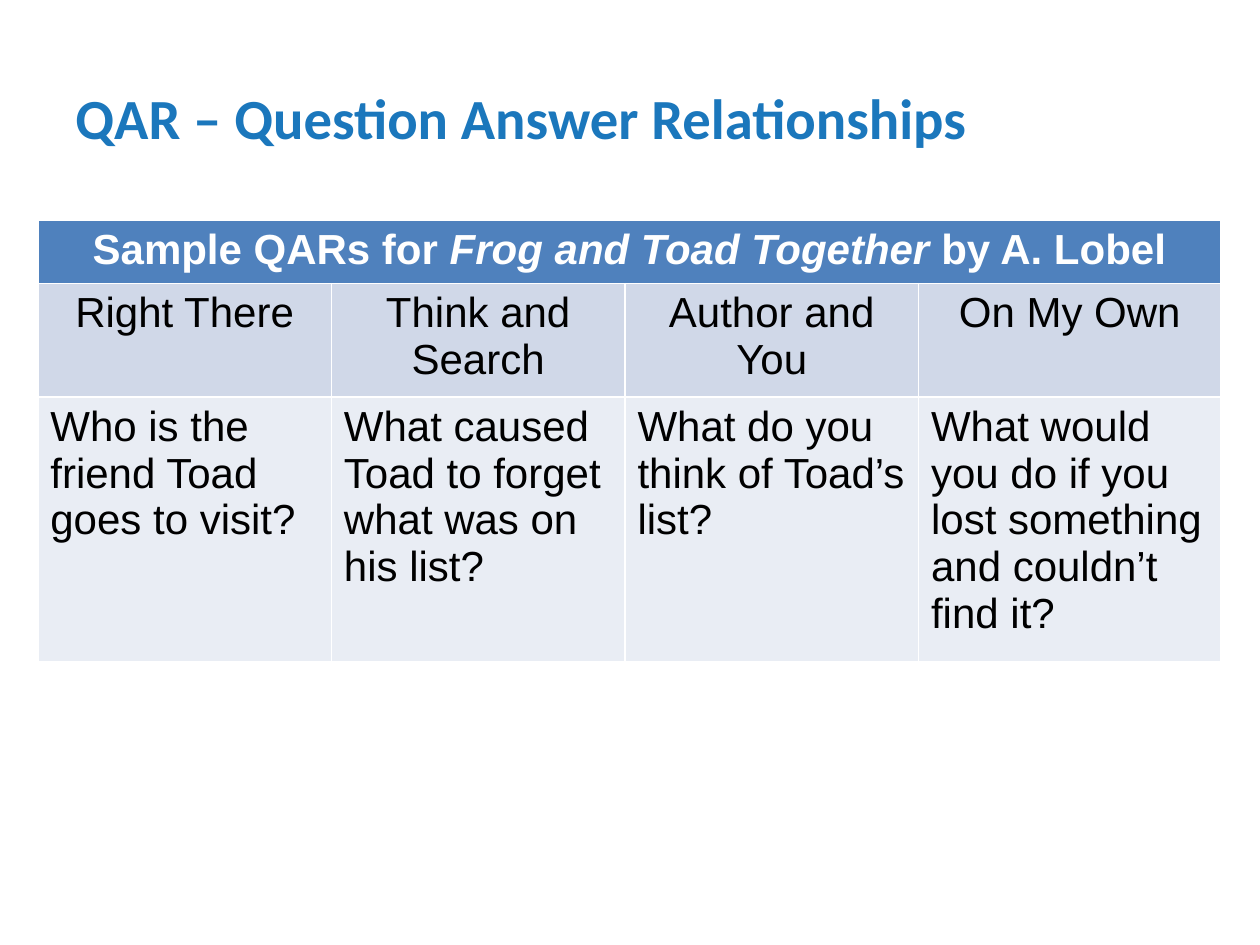
from dataclasses import dataclass

from pptx import Presentation
from pptx.dml.color import RGBColor
from pptx.enum.text import MSO_ANCHOR, PP_ALIGN
from pptx.slide import Slide
from pptx.table import Table
from pptx.util import Inches, Pt


@dataclass(frozen=True)
class Theme:
    title_font: str = "Calibri"
    table_font: str = "Arial"
    title_size: float = 32.4
    table_size: float = 24
    title: str = "1B77BC"
    header_text: str = "FFFFFF"
    body_text: str = "000000"


@dataclass(frozen=True)
class Run:
    text: str
    italic: bool = False


@dataclass(frozen=True)
class RowStyle:
    fill: str
    text: str
    bold: bool
    align: PP_ALIGN


@dataclass(frozen=True)
class Relationship:
    name: str
    question: str


THEME = Theme()
HEADING = RowStyle("4F81BD", THEME.header_text, True, PP_ALIGN.CENTER)
NAMES = RowStyle("D0D8E8", THEME.body_text, False, PP_ALIGN.CENTER)
QUESTIONS = RowStyle("E9EDF4", THEME.body_text, False, PP_ALIGN.LEFT)

HEADING_RUNS = [
    Run("Sample QARs for "),
    Run("Frog and Toad Together ", italic=True),
    Run("by A. Lobel"),
]
RELATIONSHIPS = [
    Relationship("Right There", "Who is the friend Toad goes to visit?"),
    Relationship("Think and Search", "What caused Toad to forget what was on his list?"),
    Relationship("Author and You", "What do you think of Toad’s list?"),
    Relationship("On My Own", "What would you do if you lost something and couldn’t find it?"),
]
COLUMN_WIDTHS = [2.33, 2.33, 2.33, 2.4]
ROW_HEIGHT = 0.41  # minimum; rows grow with their text


def add_title(slide: Slide, text: str) -> None:
    box = slide.shapes.add_textbox(Inches(0.5), Inches(0.3), Inches(9), Inches(1.25))
    frame = box.text_frame
    frame.word_wrap = True
    frame.vertical_anchor = MSO_ANCHOR.MIDDLE
    paragraph = frame.paragraphs[0]
    paragraph.text = text
    font = paragraph.font
    font.name, font.size, font.bold = THEME.title_font, Pt(THEME.title_size), True
    font.color.rgb = RGBColor.from_string(THEME.title)


def fill_cell(table: Table, row: int, column: int, runs: list[Run], style: RowStyle) -> None:
    cell = table.cell(row, column)
    cell.fill.solid()
    cell.fill.fore_color.rgb = RGBColor.from_string(style.fill)
    paragraph = cell.text_frame.paragraphs[0]
    paragraph.alignment = style.align
    font = paragraph.font
    font.name, font.size, font.bold = THEME.table_font, Pt(THEME.table_size), style.bold
    font.color.rgb = RGBColor.from_string(style.text)
    for item in runs:
        run = paragraph.add_run()
        run.text = item.text
        if item.italic:
            run.font.italic = True


def add_relationship_table(slide: Slide) -> None:
    shape = slide.shapes.add_table(
        3, len(RELATIONSHIPS), Inches(0.3), Inches(1.75), Inches(9.4), Inches(3.5)
    )
    table = shape.table
    for column, width in zip(table.columns, COLUMN_WIDTHS):
        column.width = Inches(width)
    for row in table.rows:
        row.height = Inches(ROW_HEIGHT)
    shape.height = Inches(3.5)

    table.cell(0, 0).merge(table.cell(0, len(RELATIONSHIPS) - 1))
    fill_cell(table, 0, 0, HEADING_RUNS, HEADING)
    for column, relationship in enumerate(RELATIONSHIPS):
        fill_cell(table, 1, column, [Run(relationship.name)], NAMES)
        fill_cell(table, 2, column, [Run(relationship.question)], QUESTIONS)


def main() -> None:
    presentation = Presentation()
    presentation.slide_width, presentation.slide_height = Inches(10), Inches(7.5)
    slide = presentation.slides.add_slide(presentation.slide_layouts[6])
    add_title(slide, "QAR – Question Answer Relationships")
    add_relationship_table(slide)
    presentation.save("out.pptx")


if __name__ == "__main__":
    main()
